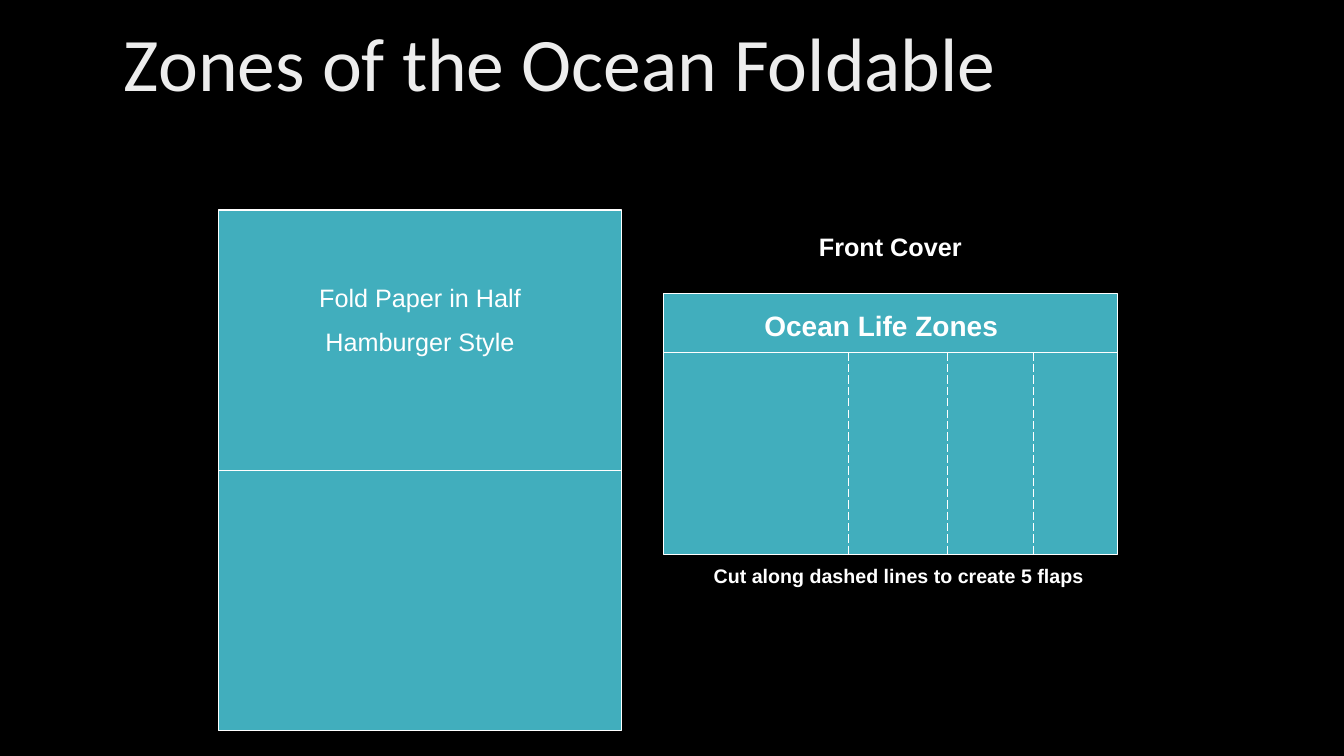
from dataclasses import dataclass

from lxml.etree import SubElement
from pptx import Presentation
from pptx.dml.color import RGBColor
from pptx.enum.dml import MSO_LINE_DASH_STYLE as DASH
from pptx.enum.shapes import MSO_CONNECTOR as CONNECTOR, MSO_SHAPE as SHAPE
from pptx.enum.text import MSO_ANCHOR as ANCHOR, PP_ALIGN as ALIGN
from pptx.oxml.ns import qn
from pptx.util import Pt


@dataclass(frozen=True)
class Theme:
    """Colours, fonts and sizes of the slide."""
    background: RGBColor = RGBColor(0, 0, 0)
    paper: RGBColor = RGBColor(0x41, 0xAE, 0xBD)
    ink: RGBColor = RGBColor(0xFF, 0xFF, 0xFF)
    title_ink: RGBColor = RGBColor(0xED, 0xED, 0xED)
    title_font: str = "Calibri"
    body_font: str = "Arial"
    title_size: int = 54
    heading_size: int = 20
    body_size: int = 18
    caption_size: int = 14
    line_width: float = 0.75
    paragraph_gap: int = 10


class SlideBuilder:
    """Draws styled elements on one slide."""

    def __init__(self, slide, theme):
        self.slide = slide
        self.theme = theme
        slide.background.fill.solid()
        slide.background.fill.fore_color.rgb = theme.background

    def outline(self, line):
        """Give a line the common colour and width."""
        line.color.rgb = self.theme.ink
        line.width = Pt(self.theme.line_width)

    def sheet(self, left, top, width, height):
        """Draw a sheet of paper."""
        shape = self.slide.shapes.add_shape(
            SHAPE.RECTANGLE, Pt(left), Pt(top), Pt(width), Pt(height))
        shape.shadow.inherit = False
        shape.fill.solid()
        shape.fill.fore_color.rgb = self.theme.paper
        self.outline(shape.line)
        return shape

    def line(self, x1, y1, x2, y2, dash=None):
        """Draw a straight line, dashed on request."""
        connector = self.slide.shapes.add_connector(
            CONNECTOR.STRAIGHT, Pt(x1), Pt(y1), Pt(x2), Pt(y2))
        self.outline(connector.line)
        if dash:
            connector.line.dash_style = dash
        SubElement(connector._element.spPr, qn("a:effectLst"))
        return connector

    def text(self, content, left, top, width, height, size, bold=False):
        """Write centred body text."""
        box = self.slide.shapes.add_textbox(Pt(left), Pt(top), Pt(width), Pt(height))
        frame = box.text_frame
        frame.word_wrap = True
        frame.text = content
        for index, paragraph in enumerate(frame.paragraphs):
            paragraph.alignment = ALIGN.CENTER
            if index:
                paragraph.space_before = Pt(self.theme.paragraph_gap)
            font = paragraph.runs[0].font
            font.name = self.theme.body_font
            font.size = Pt(size)
            font.bold = bold
            font.color.rgb = self.theme.ink
        return frame

    def title(self, content, left, top, width, height):
        """Write the slide title."""
        frame = self.text(content, left, top, width, height, self.theme.title_size)
        frame.vertical_anchor = ANCHOR.MIDDLE
        paragraph = frame.paragraphs[0]
        paragraph.alignment = ALIGN.LEFT
        paragraph.line_spacing = 0.9
        font = paragraph.runs[0].font
        font.name = self.theme.title_font
        font.color.rgb = self.theme.title_ink


def main():
    """Build and save the foldable slide."""
    presentation = Presentation()
    presentation.slide_width, presentation.slide_height = Pt(960), Pt(540)
    theme = Theme()
    slide = presentation.slides.add_slide(presentation.slide_layouts[6])
    builder = SlideBuilder(slide, theme)

    builder.title("Zones of the Ocean Foldable", 81.5, 12, 723, 72)

    paper = builder.sheet(156, 150, 288, 372)
    fold = builder.line(156, 336, 444, 336)
    fold.begin_connect(paper, 1)
    fold.end_connect(paper, 3)
    builder.text("Fold Paper in Half\nHamburger Style", 216, 198, 168, 61, theme.body_size)

    left, top, width, height = 474, 210, 324, 186
    header_bottom = top + 42
    builder.sheet(left, top, width, height)
    builder.line(left, header_bottom, left + width, header_bottom)
    for cut in (606, 677, 738):
        builder.line(cut, header_bottom, cut, top + height, DASH.LONG_DASH)

    builder.text("Front Cover", 552, 162, 168, 29, theme.body_size, True)
    builder.text("Ocean Life Zones", 476.5, 216.5, 306, 32, theme.heading_size, True)
    builder.text("Cut along dashed lines to create 5 flaps",
                 489, 399.5, 306, 24.5, theme.caption_size, True)

    presentation.save("out.pptx")


if __name__ == "__main__":
    main()
